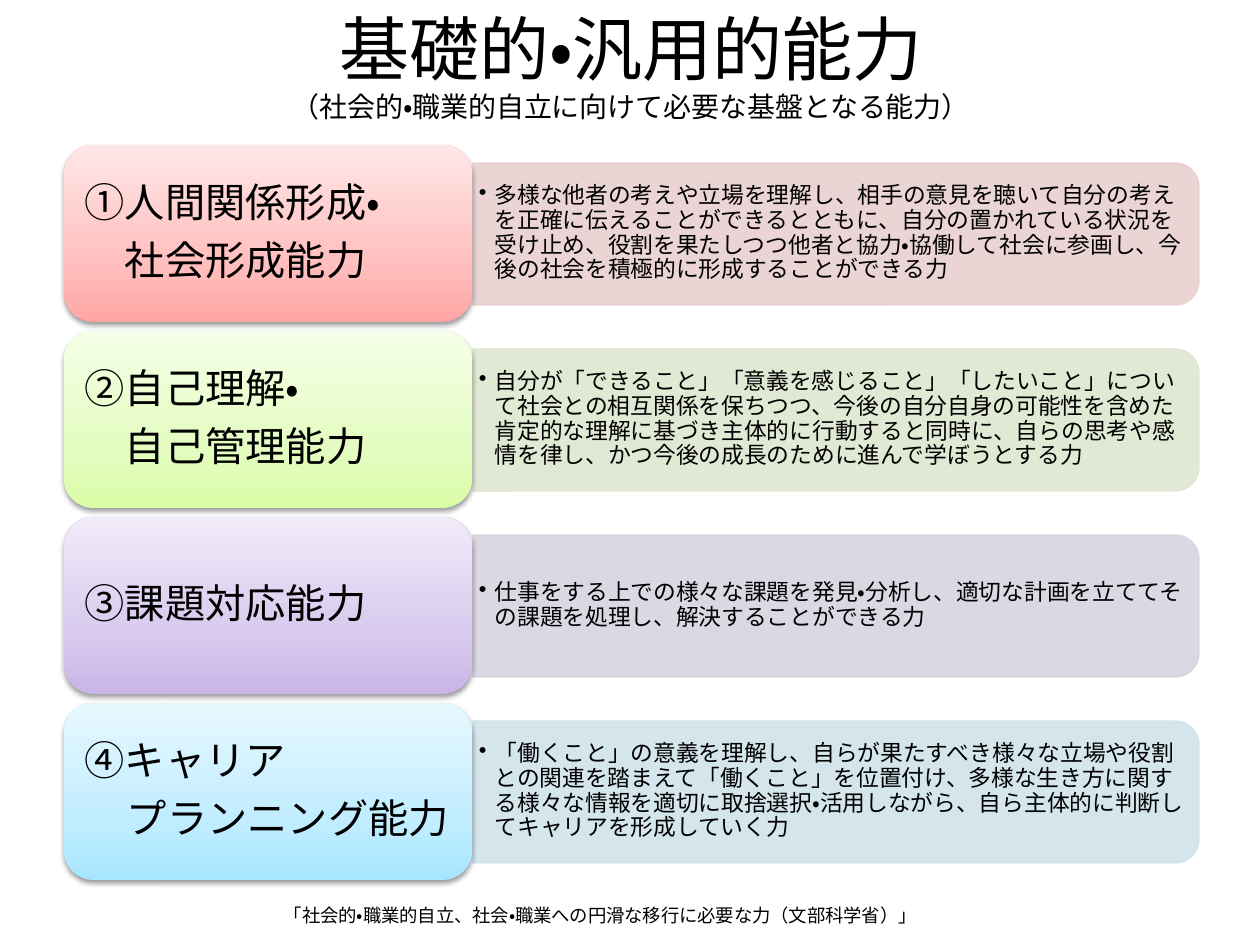
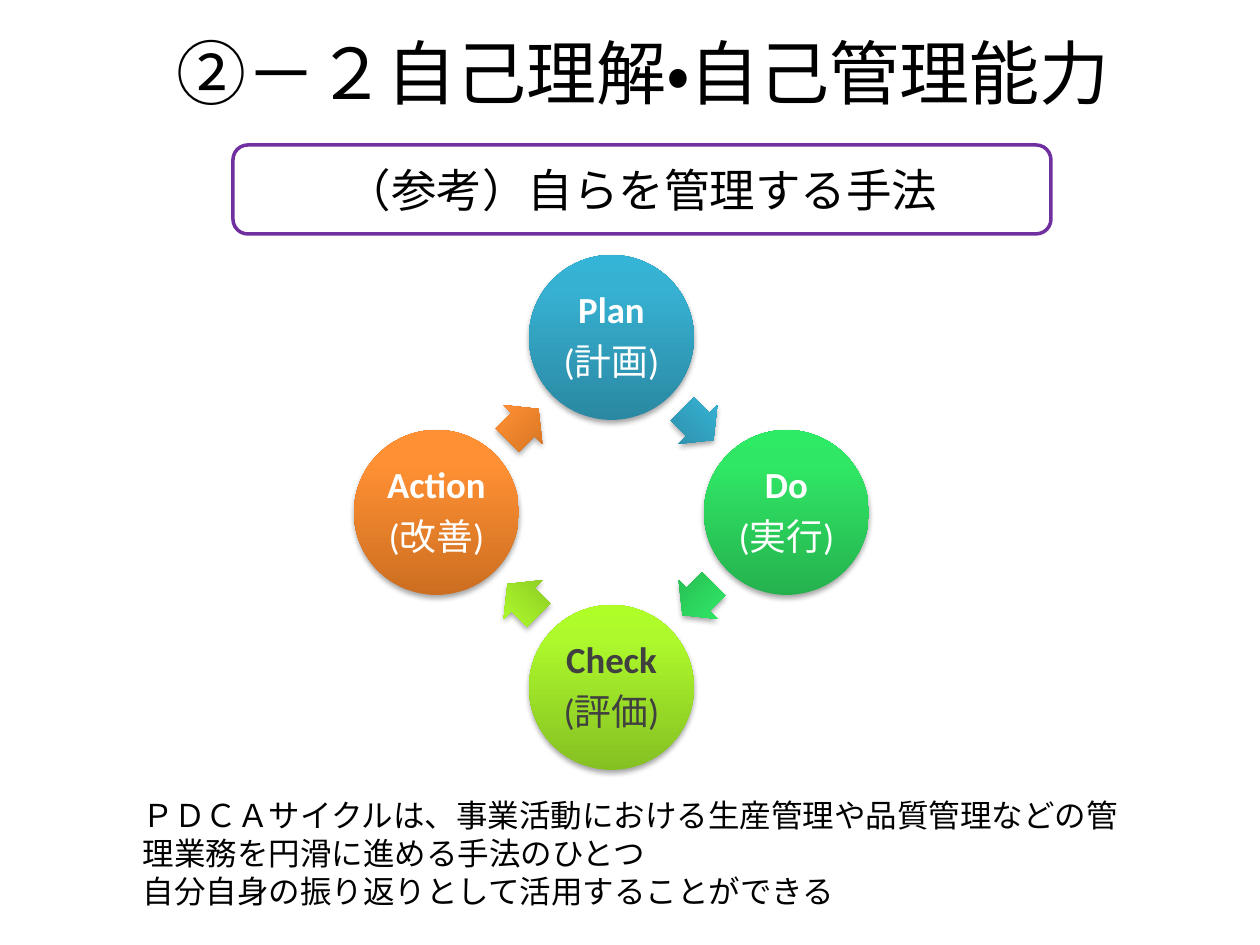
import copy

import pptx
import pptx.dml.color
import pptx.enum.lang
import pptx.enum.shapes
import pptx.enum.text
import pptx.oxml
import pptx.oxml.ns
import pptx.util

PX = 914400 / 126  # EMU in one px
RGB = pptx.dml.color.RGBColor
SHAPE = pptx.enum.shapes.MSO_SHAPE
LEFT = pptx.enum.text.PP_ALIGN.LEFT
CENTER = pptx.enum.text.PP_ALIGN.CENTER
MIDDLE = pptx.enum.text.MSO_ANCHOR.MIDDLE
TOP = pptx.enum.text.MSO_ANCHOR.TOP
JAPANESE = pptx.enum.lang.MSO_LANGUAGE_ID.JAPANESE
Pt = pptx.util.Pt
NS = pptx.oxml.ns.nsdecls("a")
qn = pptx.oxml.ns.qn

BLACK = RGB(0x00, 0x00, 0x00)
WHITE = RGB(0xFF, 0xFF, 0xFF)
DARK_GRAY = RGB(0x40, 0x40, 0x40)
PURPLE = RGB(0x70, 0x30, 0xA0)
CARD_RED = RGB(0xFF, 0xA6, 0xA5), RGB(0xFF, 0xC0, 0xBF), RGB(0xFF, 0xE7, 0xE7)
CARD_GREEN = RGB(0xDA, 0xFD, 0xA7), RGB(0xE4, 0xFC, 0xC2), RGB(0xF5, 0xFF, 0xE7)
CARD_PURPLE = RGB(0xC9, 0xB5, 0xE8), RGB(0xD8, 0xCB, 0xEE), RGB(0xF0, 0xEA, 0xF9)
CARD_BLUE = RGB(0xA7, 0xE6, 0xFF), RGB(0xC1, 0xED, 0xFF), RGB(0xE7, 0xF8, 0xFF)
BAND_RED = RGB(0xE8, 0xD0, 0xD0)
BAND_GREEN = RGB(0xDE, 0xE7, 0xD1)
BAND_PURPLE = RGB(0xD8, 0xD3, 0xE0)
BAND_BLUE = RGB(0xD0, 0xE3, 0xEA)
PLAN_BLUE = RGB(0x2A, 0x88, 0xA2), RGB(0x37, 0xB1, 0xD2), RGB(0x34, 0xB4, 0xD6)
DO_GREEN = RGB(0x25, 0xB2, 0x4E), RGB(0x30, 0xE7, 0x65), RGB(0x2D, 0xEB, 0x64)
CHECK_LIME = RGB(0x85, 0xC0, 0x22), RGB(0xAD, 0xF9, 0x2C), RGB(0xAF, 0xFE, 0x28)
ACTION_ORANGE = RGB(0xCC, 0x6E, 0x20), RGB(0xFF, 0x90, 0x34), RGB(0xFF, 0x91, 0x36)


def write(shape, lines, size, color=BLACK, font="Calibri", margins=(12, 6),
          anchor=MIDDLE, **paragraph_format):
    """Fill the shape with one paragraph per line; margins are (side, top) in px."""
    frame = shape.text_frame
    side, edge = (round(margin * PX) for margin in margins)
    frame_format = dict(word_wrap=True, vertical_anchor=anchor, margin_left=side,
                        margin_right=side, margin_top=edge, margin_bottom=edge)
    for name, value in frame_format.items():
        setattr(frame, name, value)
    for index, line in enumerate(lines):
        paragraph = frame.add_paragraph() if index else frame.paragraphs[0]
        for name, value in paragraph_format.items():
            setattr(paragraph, name, value)
        run = paragraph.add_run()
        run.text = line
        for name, value in dict(name=font, size=Pt(size), language_id=JAPANESE).items():
            setattr(run.font, name, value)
        run.font.color.rgb = color
    return frame


def shade(shape, colors, middle, shadow_alpha, shadow_distance):
    """Give a bottom-to-top gradient of three colours and a soft shadow below."""
    shape.fill.gradient()
    shape.fill.gradient_angle = 90
    stops = shape.element.spPr.find(".//" + qn("a:gsLst"))
    stops.append(copy.deepcopy(stops[0]))
    for stop, color, position in zip(shape.fill.gradient_stops, colors, (0, middle, 1)):
        stop.color.rgb = color
        stop.position = position
    shape.line.fill.background()
    shape.shadow.inherit = False
    shape.element.spPr.find(qn("a:effectLst")).append(pptx.oxml.parse_xml(
        f'<a:outerShdw {NS} blurRad="40000" dist="{shadow_distance}" dir="5400000" '
        f'rotWithShape="0"><a:srgbClr val="000000"><a:alpha val="{shadow_alpha}"/>'
        '</a:srgbClr></a:outerShdw>'))


deck = pptx.Presentation()
deck.slide_width, deck.slide_height = round(1260 * PX), round(945 * PX)
blank = deck.slide_layouts[6]

# Shared title style
pages, titles = [], []
for text, box in (("基礎的・汎用的能力", (64, 16, 1134, 97)),
                  ("②－２自己理解・自己管理能力", (76, -8, 1134, 158))):
    page = deck.slides.add_slide(blank)
    title = page.shapes.add_textbox(*(round(v * PX) for v in box))
    titles.append(write(title, [text], 40, alignment=CENTER).paragraphs[0])
    pages.append(page.shapes)
abilities, cycle = pages

# Slide 1: four abilities
titles[0].add_line_break()
subtitle = titles[0].add_run()
subtitle.text = "（社会的・職業的自立に向けて必要な基盤となる能力）"
for name, value in dict(name="Calibri", size=Pt(16), language_id=JAPANESE).items():
    setattr(subtitle.font, name, value)
subtitle.font.color.rgb = BLACK

ABILITIES = [
    (["①人間関係形成・", "\u3000社会形成能力".replace("\u3000", "　")], CARD_RED, BAND_RED,
     "多様な他者の考えや立場を理解し、相手の意見を聴いて自分の考えを正確に伝えることができるとともに、"
     "自分の置かれている状況を受け止め、役割を果たしつつ他者と協力・協働して社会に参画し、"
     "今後の社会を積極的に形成することができる力"),
    (["②自己理解・", "　自己管理能力"], CARD_GREEN, BAND_GREEN,
     "自分が「できること」「意義を感じること」「したいこと」について社会との相互関係を保ちつつ、"
     "今後の自分自身の可能性を含めた肯定的な理解に基づき主体的に行動すると同時に、"
     "自らの思考や感情を律し、かつ今後の成長のために進んで学ぼうとする力"),
    (["③課題対応能力"], CARD_PURPLE, BAND_PURPLE,
     "仕事をする上での様々な課題を発見・分析し、適切な計画を立ててその課題を処理し、"
     "解決することができる力"),
    (["④キャリア", "　プランニング能力"], CARD_BLUE, BAND_BLUE,
     "「働くこと」の意義を理解し、自らが果たすべき様々な立場や役割との関連を踏まえて"
     "「働くこと」を位置付け、多様な生き方に関する様々な情報を適切に取捨選択・活用しながら、"
     "自ら主体的に判断してキャリアを形成していく力"),
]
CARD_LEFT, CARD_TOP, CARD_WIDTH, CARD_HEIGHT, ROW_PITCH = 64, 145, 408, 177, 186
BAND_LEFT, BAND_WIDTH, BAND_HEIGHT = 473, 726, 142
TURN_SHIFT = (BAND_WIDTH - BAND_HEIGHT) // 2  # the band is an upright shape turned by 90°

for row, (label, card_colors, band_color, description) in enumerate(ABILITIES):
    top = CARD_TOP + row * ROW_PITCH
    band_box = BAND_LEFT + TURN_SHIFT, top + 18 - TURN_SHIFT, BAND_HEIGHT, BAND_WIDTH
    band = abilities.add_shape(SHAPE.ROUND_2_SAME_RECTANGLE,
                               *(round(v * PX) for v in band_box))
    band.rotation = 90
    band.shadow.inherit = False
    band.line.width = Pt(0.75)
    for paint in (band.fill, band.line.fill):
        paint.solid()
        paint.fore_color.rgb = band_color
    for color in band.element.spPr.iter(qn("a:srgbClr")):
        color.append(pptx.oxml.parse_xml(f'<a:alpha {NS} val="90000"/>'))

    detail = abilities.add_textbox(*(round(v * PX) for v in (BAND_LEFT, top + 25, 719, 127)))
    frame = write(detail, [description], 13, margins=(6, 4), level=1,
                  line_spacing=0.9, space_after=Pt(2))
    bullet = frame.paragraphs[0]._p.get_or_add_pPr()
    bullet.set("marL", "114300")
    bullet.set("indent", "-114300")
    bullet.append(pptx.oxml.parse_xml(f'<a:buChar {NS} char="•"/>'))

    card_box = CARD_LEFT, top, CARD_WIDTH, CARD_HEIGHT
    card = abilities.add_shape(SHAPE.ROUNDED_RECTANGLE, *(round(v * PX) for v in card_box))
    shade(card, card_colors, 0.35, 38000, 20000)
    card_text = write(card, label, 23, alignment=LEFT, line_spacing=0.9, space_after=Pt(8))
card_text.paragraphs[-1].alignment = CENTER

citation = abilities.add_textbox(*(round(v * PX) for v in (272, 898, 963, 35)))
write(citation, ["「社会的・職業的自立、社会・職業への円滑な移行に必要な力（文部科学省）」"],
      10.5, font="Arial", anchor=TOP)

# Slide 2: the PDCA cycle
STEPS = [
    (["Plan", "(計画)"], PLAN_BLUE, WHITE, (0, -1)),
    (["Do", "(実行)"], DO_GREEN, WHITE, (1, 0)),
    (["Check", "(評価)"], CHECK_LIME, DARK_GRAY, (0, 1)),
    (["Action", "(改善)"], ACTION_ORANGE, WHITE, (-1, 0)),
]
CENTER_X, CENTER_Y, RADIUS, CIRCLE = 611, 512, 175, 165
ARROW_WIDTH, ARROW_HEIGHT = 44, 55

for index, (label, colors, text_color, (dx, dy)) in enumerate(STEPS):
    circle_box = (CENTER_X + dx * RADIUS - CIRCLE // 2,
                  CENTER_Y + dy * RADIUS - CIRCLE // 2, CIRCLE, CIRCLE)
    circle = cycle.add_shape(SHAPE.OVAL, *(round(v * PX) for v in circle_box))
    shade(circle, colors, 0.8, 35000, 23000)
    frame = write(circle, label, 21, text_color, margins=(4, 4), alignment=CENTER,
                  line_spacing=0.9, space_after=Pt(7))
    frame.paragraphs[0].runs[0].font.bold = True

    # Halfway to the next step, a quarter turn further
    arrow_box = (CENTER_X + (dx - dy) * RADIUS // 2 - ARROW_WIDTH // 2,
                 CENTER_Y + (dy + dx) * RADIUS // 2 - ARROW_HEIGHT // 2,
                 ARROW_WIDTH, ARROW_HEIGHT)
    arrow = cycle.add_shape(SHAPE.RIGHT_ARROW, *(round(v * PX) for v in arrow_box))
    arrow.rotation = 45 + 90 * index
    arrow.adjustments[0], arrow.adjustments[1] = 0.6, 0.5
    shade(arrow, colors, 0.8, 35000, 23000)

explanation = cycle.add_textbox(*(round(v * PX) for v in (131, 790, 1022, 127)))
write(explanation,
      ["ＰＤＣＡサイクルは、事業活動における生産管理や品質管理などの管理業務を円滑に進める手法のひとつ",
       "自分自身の振り返りとして活用することができる"], 18, font="Arial", anchor=TOP)

method = cycle.add_shape(SHAPE.ROUNDED_RECTANGLE,
                         *(round(v * PX) for v in (233, 145, 818, 89)))
method.fill.background()
method.line.color.rgb = PURPLE
method.line.width = Pt(2)
method.shadow.inherit = False
write(method, ["（参考）自らを管理する手法"], 26, alignment=CENTER)

deck.save("out.pptx")
